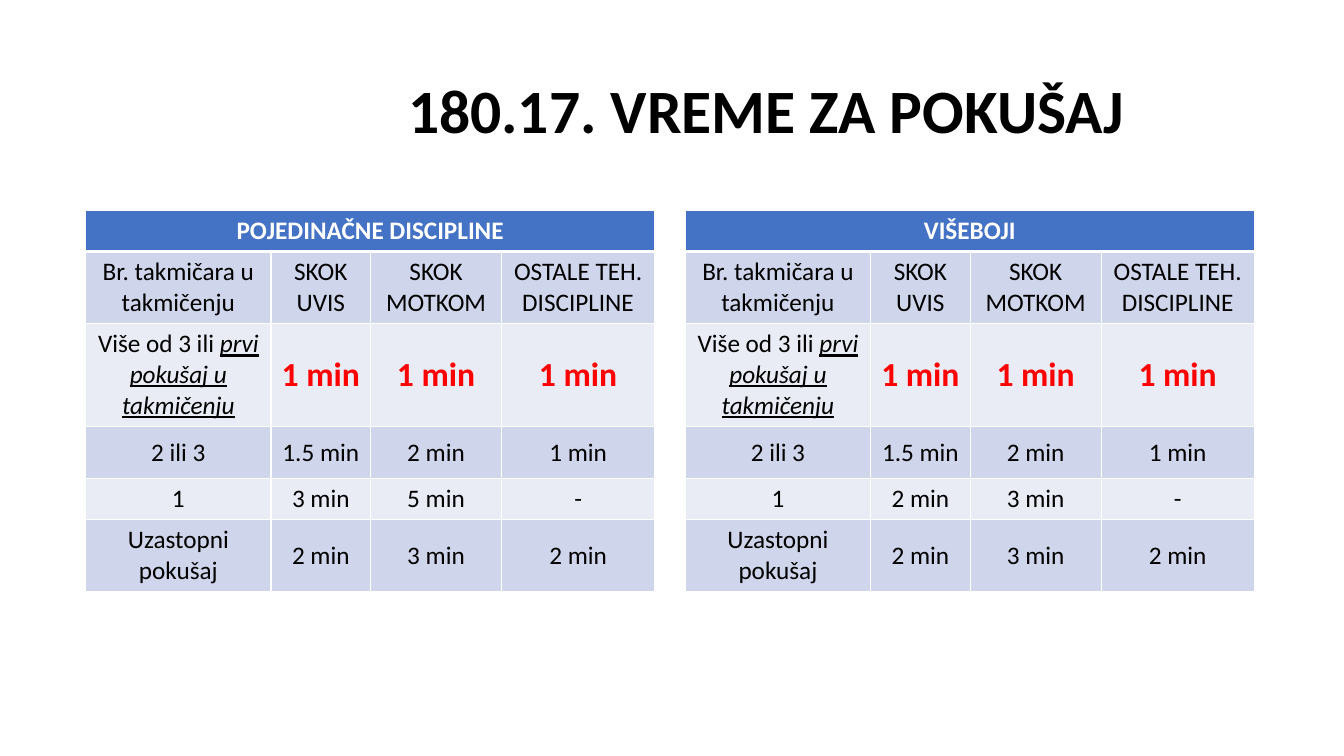
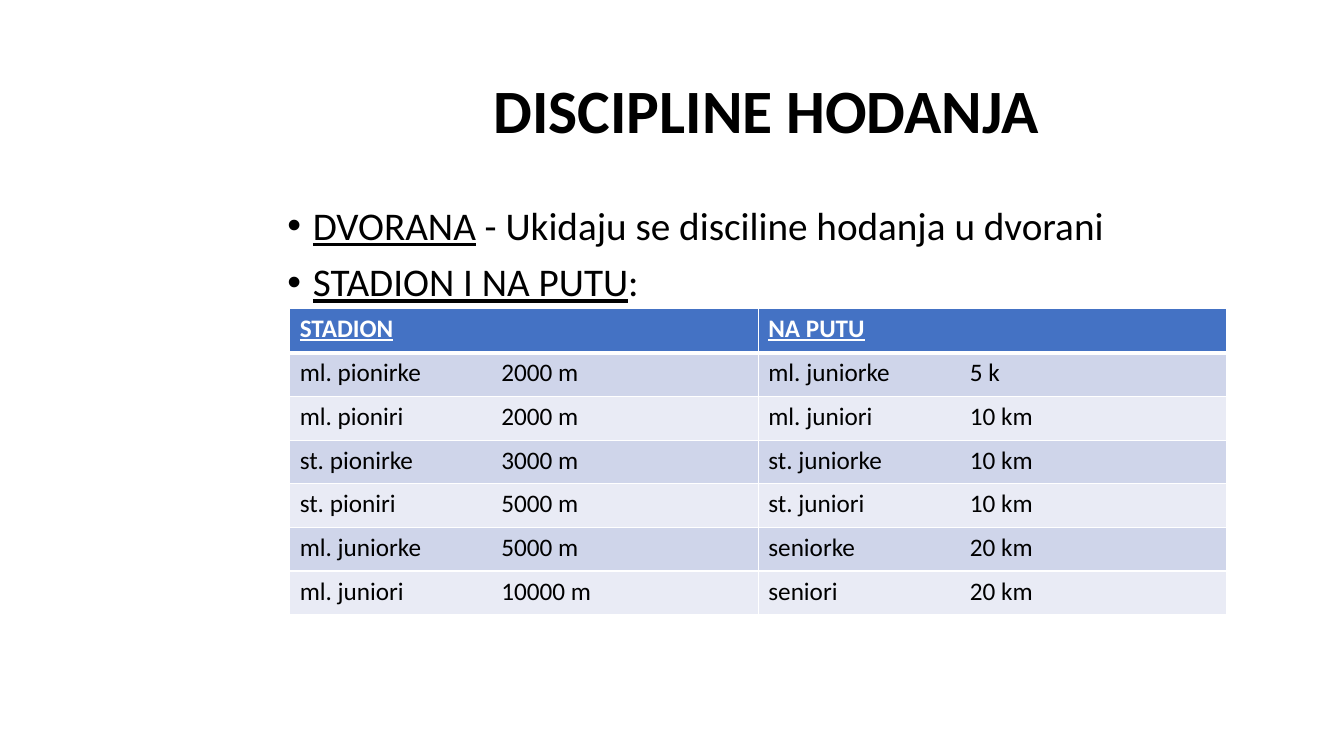
from dataclasses import dataclass

from lxml import etree
from pptx import Presentation
from pptx.dml.color import RGBColor
from pptx.enum import text as t
from pptx.oxml.ns import qn
from pptx.util import Cm, Pt


@dataclass(frozen=True)
class Theme:
    font: str = "Calibri"
    black: str = "000000"
    white: str = "FFFFFF"
    red: str = "FF0000"
    header: str = "4472C4"
    bands: tuple = ("CFD5EA", "E9EBF5")
    title_size: int = 44
    body_size: int = 28
    cell_size: int = 18
    accent_size: int = 24
    thin: int = 1
    thick: int = 3


TH = Theme()


def add_runs(p, marked, size, color, bold=False, italic=False):
    """Add text run by run; parts between underscores are underlined, and italic if asked."""
    for i, part in enumerate(marked.split("_")):
        if part:
            r = p.add_run()
            r.text = part
            f = r.font
            f.name, f.size, f.bold = TH.font, Pt(size), bold
            f.underline = i % 2 == 1
            f.italic = italic and i % 2 == 1
            f.color.rgb = RGBColor.from_string(color)


def add_table(s, left, top, widths, heights, rows, centred=False, tab=None):
    """Add a banded table; one-cell rows span the table and '!' marks an accented cell."""
    tbl = s.shapes.add_table(len(rows), len(widths), Cm(left), Cm(top),
                             Cm(sum(widths)), Cm(sum(heights))).table
    for col, width in zip(tbl.columns, widths):
        col.width = Cm(width)
    for i, (row, height, texts) in enumerate(zip(tbl.rows, heights, rows)):
        row.height = Cm(height)
        for cell in row.cells:
            tcPr = cell._tc.get_or_add_tcPr()
            for side in "LRTB":
                heavy = (i, side) in ((0, "B"), (1, "T"))
                ln = etree.SubElement(tcPr, qn("a:ln" + side),
                                      w=str(Pt(TH.thick if heavy else TH.thin)))
                fill = etree.SubElement(ln, qn("a:solidFill"))
                etree.SubElement(fill, qn("a:srgbClr"), val=TH.white)
            cell.fill.solid()
            cell.fill.fore_color.rgb = RGBColor.from_string(
                TH.bands[(i - 1) % 2] if i else TH.header)
            if centred:
                cell.vertical_anchor = t.MSO_ANCHOR.MIDDLE
        if len(texts) < len(widths):
            tbl.cell(i, 0).merge(tbl.cell(i, len(widths) - 1))
        for cell, content in zip(row.cells, texts):
            accent = content.startswith("!")
            color = TH.red if accent else TH.black if i else TH.white
            size = TH.accent_size if accent else TH.cell_size
            tf = cell.text_frame
            for j, line in enumerate(content.lstrip("!").split("\n")):
                p = tf.add_paragraph() if j else tf.paragraphs[0]
                p.alignment = t.PP_ALIGN.CENTER if centred else t.PP_ALIGN.LEFT
                if tab:
                    tabs = etree.SubElement(p._p.get_or_add_pPr(), qn("a:tabLst"))
                    etree.SubElement(tabs, qn("a:tab"), pos=str(Cm(tab)), algn="l")
                add_runs(p, line, size, color, bold=accent or i == 0, italic=centred)


prs = Presentation()
prs.slide_width, prs.slide_height = Cm(33.87), Cm(19.05)

# Titles
slides = []
for layout, title in ((5, "180.17. VREME ZA POKUŠAJ"), (1, "DISCIPLINE HODANJA")):
    s = prs.slides.add_slide(prs.slide_layouts[layout])
    sp = s.shapes.title
    sp.left, sp.top, sp.width, sp.height = Cm(6.99), Cm(1.02), Cm(24.66), Cm(3.68)
    tf = sp.text_frame
    tf.auto_size = t.MSO_AUTO_SIZE.NONE
    tf.vertical_anchor = t.MSO_ANCHOR.MIDDLE
    p = tf.paragraphs[0]
    p.alignment, p.line_spacing = t.PP_ALIGN.CENTER, 0.9
    add_runs(p, title, TH.title_size, TH.black, bold=True)
    slides.append(s)
attempts, walking = slides

# Time for an attempt: the tables differ in heading and in the row for one athlete
for left, heading, single in (
    (2.16, "POJEDINAČNE DISCIPLINE", ("3 min", "5 min")),
    (17.27, "VIŠEBOJI", ("2 min", "3 min")),
):
    add_table(attempts, left, 5.31, (4.67, 2.51, 3.3, 3.86),
              (1.03, 1.8, 2.6, 1.32, 1.03, 1.8), (
        (heading,),
        ("Br. takmičara u takmičenju", "SKOK UVIS", "SKOK MOTKOM", "OSTALE TEH. \nDISCIPLINE"),
        ("Više od 3 ili _prvi pokušaj u takmičenju_", "!1 min", "!1 min", "!1 min"),
        ("2 ili 3", "1.5 min", "2 min", "1 min"),
        ("1", *single, "-"),
        ("Uzastopni pokušaj", "2 min", "3 min", "2 min"),
    ), centred=True)

# Race walking
sp = walking.placeholders[1]
sp.left, sp.top, sp.width, sp.height = Cm(6.99), Cm(5.08), Cm(24.66), Cm(12.09)
tf = sp.text_frame
tf.auto_size = t.MSO_AUTO_SIZE.NONE
for i, line in enumerate(("_DVORANA_ - Ukidaju se disciline hodanja u dvorani",
                          "_STADION I NA PUTU_:")):
    p = tf.add_paragraph() if i else tf.paragraphs[0]
    pPr = p._p.get_or_add_pPr()
    pPr.set("marL", str(Cm(0.64)))
    pPr.set("indent", str(-Cm(0.64)))
    etree.SubElement(pPr, qn("a:buFont"), typeface="Arial")
    etree.SubElement(pPr, qn("a:buChar"), char="•")
    p.line_spacing, p.space_before = 0.9, Pt(10 if i else 0)
    add_runs(p, line, TH.body_size, TH.black)

add_table(walking, 7.3, 7.77, (11.81, 11.81), (1.12,) + (1.1,) * 6, (
    ("_STADION_", "_NA PUTU_"),
    ("ml. pionirke\t2000 m", "ml. juniorke\t5 k"),
    ("ml. pioniri\t2000 m", "ml. juniori\t10 km"),
    ("st. pionirke\t3000 m", "st. juniorke\t10 km"),
    ("st. pioniri\t5000 m", "st. juniori\t10 km"),
    ("ml. juniorke\t5000 m", "seniorke\t20 km"),
    ("ml. juniori\t10000 m", "seniori\t20 km"),
), tab=5.08)

prs.save("out.pptx")
